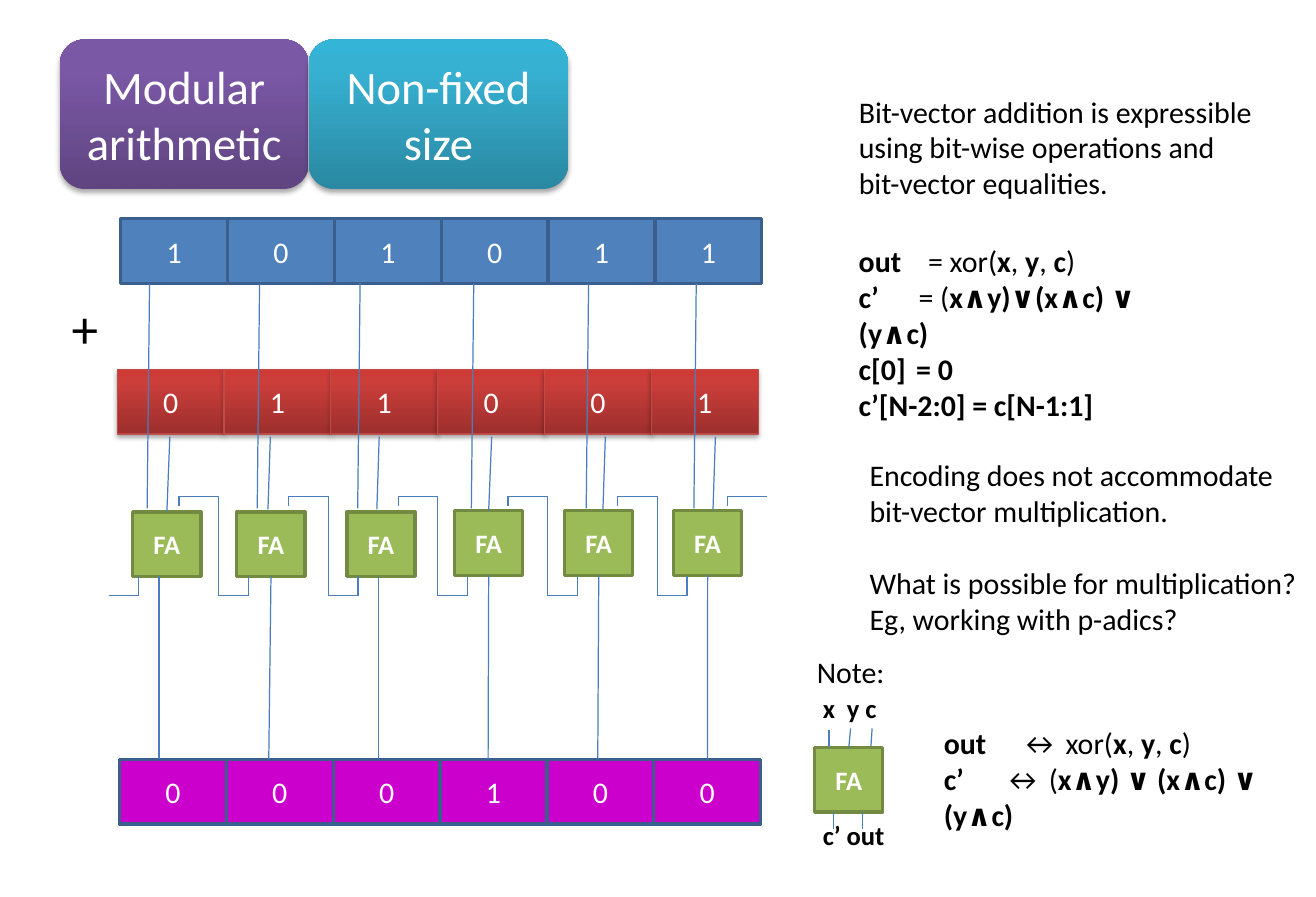
from copy import deepcopy

from pptx import Presentation
from pptx.dml.color import RGBColor
from pptx.enum.shapes import MSO_CONNECTOR, MSO_SHAPE
from pptx.enum.text import MSO_ANCHOR, PP_ALIGN
from pptx.oxml import parse_xml
from pptx.oxml.ns import nsdecls, qn
from pptx.oxml.xmlchemy import OxmlElement
from pptx.util import Inches, Pt

RECT, ROUND = MSO_SHAPE.RECTANGLE, MSO_SHAPE.ROUNDED_RECTANGLE
LINE = MSO_CONNECTOR.STRAIGHT
CENTER, MIDDLE = PP_ALIGN.CENTER, MSO_ANCHOR.MIDDLE
TOP, BOTTOM = 0, 2
HEX = {
    "text": "000000", "white": "FFFFFF", "wire": "4B7EBC",
    "blue": "4F81BD", "navy": "3A5F8C", "pink": "CC00CC",
    "green": "9BBB59", "moss": "738A42", "rust": "BF4C48",
}
FADES = {
    "purple": ("5F4480", "7B58A6", "7C57A8"),
    "teal": ("2A88A2", "37B1D2", "34B4D6"),
    "red": ("9C2F2D", "CB3E3A", "CE3B37"),
}
BITS, CELL, HIGH = 6, 0.893, 0.54
STEP = 5.5 / BITS
FA_WIDE = 0.57
NEAR = 0.02


def color(name):
    return RGBColor.from_string(HEX[name])


def add_run(para, text, size, bold=False, tint="text"):
    run = para.add_run()
    run.text = text
    font = run.font
    font.name, font.size, font.bold = "Calibri", Pt(size), bold
    font.color.rgb = color(tint)


def fade(shape, name):
    """Fill bottom to top with three stops and cast a soft shadow."""
    fill = shape.fill
    fill.gradient()
    fill.gradient_angle = 90
    props = shape._element.spPr
    stops = props.find(qn("a:gradFill")).find(qn("a:gsLst"))
    stops.insert(1, deepcopy(stops[0]))
    for stop, spot, tone in zip(fill.gradient_stops, (0, 0.8, 1), FADES[name]):
        stop.position = spot
        stop.color.rgb = RGBColor.from_string(tone)
    props.find(qn("a:effectLst")).append(parse_xml(
        f'<a:outerShdw {nsdecls("a")} blurRad="40000" dist="23000" '
        'dir="5400000" rotWithShape="0"><a:srgbClr val="000000">'
        '<a:alpha val="35000"/></a:srgbClr></a:outerShdw>'))


def add_box(shapes, at, text, size, fill, edge=None, weight=2, bold=False,
            kind=RECT):
    box = shapes.add_shape(kind, *map(Inches, at))
    box.shadow.inherit = False
    if fill in FADES:
        fade(box, fill)
    else:
        box.fill.solid()
        box.fill.fore_color.rgb = color(fill)
    if edge:
        box.line.color.rgb = color(edge)
        box.line.width = Pt(weight)
    else:
        box.line.fill.background()
    frame = box.text_frame
    frame.word_wrap = True
    frame.vertical_anchor = MIDDLE
    para = frame.paragraphs[0]
    para.alignment = CENTER
    add_run(para, text, size, bold, "white")
    return box


def add_row(shapes, left, top, bits, *style):
    row = shapes.add_group_shape().shapes
    for i, bit in enumerate(bits):
        add_box(row, (left + i * CELL, top, CELL, HIGH), bit, 18, *style)


def add_adder(shapes, left, top):
    return add_box(shapes, (left, top, FA_WIDE, HIGH), "FA", 16,
                   "green", "moss", bold=True)


def add_wire(shapes, start, end):
    wire = shapes.add_connector(LINE, *map(Inches, start + end))
    wire.line.color.rgb = color("wire")
    wire.line.width = Pt(0.75)
    wire._element.spPr.append(OxmlElement("a:effectLst"))
    return wire


def add_chain(shapes, spots):
    group = shapes.add_group_shape().shapes
    for start, end in zip(spots, spots[1:]):
        add_wire(group, start, end)


def add_text(shapes, at, lines, size=18):
    """Each line is (runs, space before in points, tab stop in inches)."""
    frame = shapes.add_textbox(*map(Inches, at)).text_frame
    frame.word_wrap = True
    for i, (runs, gap, tab) in enumerate(lines):
        para = frame.add_paragraph() if i else frame.paragraphs[0]
        if gap:
            para.space_before = Pt(gap)
        if tab:
            para._p.get_or_add_pPr().append(parse_xml(
                f'<a:tabLst {nsdecls("a")}><a:tab pos="{Inches(tab)}" '
                'algn="l"/></a:tabLst>'))
        for text, bold in runs:
            add_run(para, text, size, bold)


def plain(text, gap=0):
    return [(text, False)], gap, None


def rules(sign, out_tab, carry_tab):
    """The two lines that define a full adder."""
    xor = [("out", True), (f"\t{sign} xor(", False), ("x", True), (", ", False),
           ("y", True), (", ", False), ("c", True), (")", False)]
    gap = " " if sign == "↔" else ""
    carry = [("c’", True), (f"\t{sign} (", False),
             (f"x∧y){gap}∨{gap}(x∧c) ∨ (y∧c)", True)]
    return [(xor, 0, out_tab), (carry, 0, carry_tab)]


def add_circuit(shapes):
    lefts = (1.11, 1.98, 2.9, 3.8, 4.72, 5.63)
    x_ins = (1.25, 2.17, 3.01, 3.96, 4.92, 5.82)
    y_ins = (1.42, 2.26, 3.17, 4.11, 5.06, 5.98)
    tops = (4.28,) * 3 + (4.27,) * 3
    adders = [add_adder(shapes, *spot) for spot in zip(lefts, tops)]
    for i, (adder, left, top) in enumerate(zip(adders, lefts, tops)):
        mid = left + FA_WIDE / 2
        add_wire(shapes, (x_ins[i], 2.37), (x_ins[i] - 0.02, 4.25))
        end = y_ins[i] - 0.02
        wire = add_wire(shapes, (y_ins[i], 3.65), (end, 4.26))
        if abs(end - mid) < NEAR:
            wire.end_connect(adder, TOP)
        out = 1.33 + i * STEP
        wire = add_wire(shapes, (out, 4.82), (out, 6.35))
        if abs(out - mid) < NEAR:
            wire.begin_connect(adder, BOTTOM)
    for i in range(BITS + 1):
        x = 0.58 + i * STEP
        spots = [(x + 0.58, 4.82), (x + 0.58, 4.98), (x + 0.33, 4.98),
                 (x + 0.33, 4.15), (x, 4.15), (x, 4.23)]
        if i == 0:
            spots = spots[:3]
        elif i == BITS:
            spots = spots[3:]
        add_chain(shapes, spots)


def add_note(shapes):
    add_text(shapes, (6.73, 5.42, 0.77, 0.4), [plain("Note:")])
    add_text(shapes, (7.79, 6.01, 3.21, 0.71), rules("↔", 0.64, 0.5))
    adder = add_adder(shapes, 6.81, 6.25)
    add_wire(shapes, (6.93, 6.1), (6.93, 6.25))
    add_wire(shapes, (7.11, 6.09), (7.11, 6.25)).end_connect(adder, TOP)
    add_wire(shapes, (7.29, 6.09), (7.28, 6.24))
    for x in (6.97, 7.21):
        add_wire(shapes, (x, 6.79), (x, 6.93))
    add_text(shapes, (6.78, 5.74, 0.9, 1.48), [
        ([("x\ty c", True)], 0, 0.2), ([("c’ out", True)], 57, None)], 16)


def main():
    deck = Presentation()
    deck.slide_width, deck.slide_height = Inches(11), Inches(7.5)
    shapes = deck.slides.add_slide(deck.slide_layouts[6]).shapes
    add_box(shapes, (0.5, 0.33, 2.08, 1.25), "Modular arithmetic", 28,
            "purple", kind=ROUND)
    add_box(shapes, (2.58, 0.33, 2.17, 1.25), "Non-fixed size", 28,
            "teal", kind=ROUND)
    add_row(shapes, 1.01, 1.83, "101011", "blue", "navy")
    add_row(shapes, 0.98, 3.09, "011001", "red", "rust", 0.75)
    add_row(shapes, 1, 6.35, "000100", "pink", "navy")
    add_text(shapes, (0.5, 2.42, 0.43, 0.64), [plain("+")], 32)
    add_circuit(shapes)
    add_text(shapes, (7.08, 0.73, 3.59, 1.01), [
        plain("Bit-vector addition is expressible"),
        plain("using bit-wise operations and"),
        plain("bit-vector equalities.")])
    add_text(shapes, (7.08, 1.98, 2.93, 1.31), rules("=", 0.58, 0.5) + [
        ([("c[0]\t= 0", True)], 0, 0.48),
        ([("c’[N-2:0] = c[N-1:1]", True)], 0, None)])
    add_text(shapes, (7.17, 3.77, 3.87, 1.62), [
        plain("Encoding does not accommodate"),
        plain("bit-vector multiplication."),
        plain("What is possible for multiplication?", 22),
        plain("Eg, working with p-adics?")])
    add_note(shapes)
    deck.save("out.pptx")


if __name__ == "__main__":
    main()
